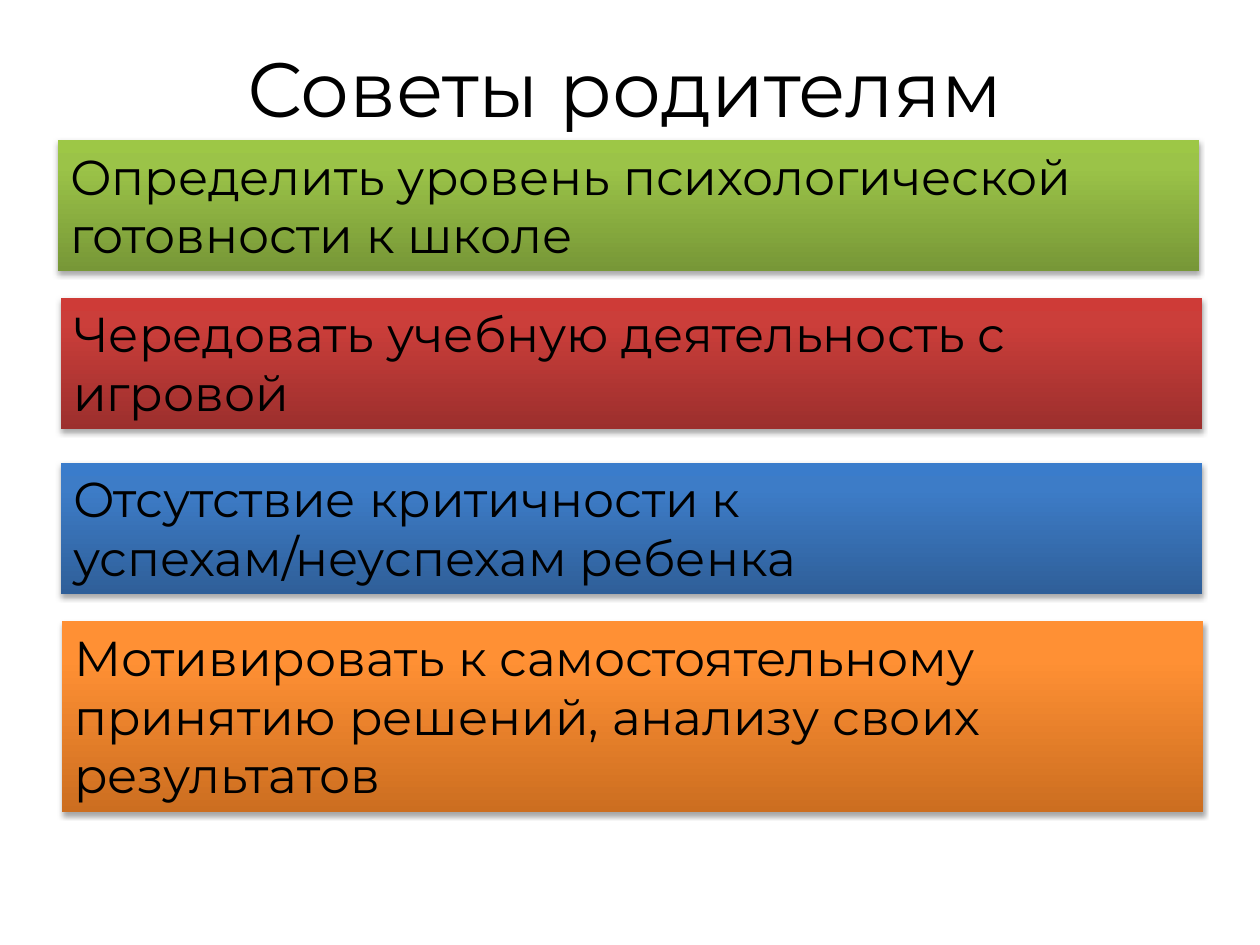
"""Build a slide with a title and four coloured bars of advice for parents."""
from dataclasses import dataclass

from lxml import etree
from pptx import Presentation
from pptx.dml.color import RGBColor
from pptx.enum.shapes import MSO_SHAPE
from pptx.enum.text import MSO_ANCHOR, MSO_AUTO_SIZE, PP_ALIGN
from pptx.oxml.ns import qn
from pptx.shapes.autoshape import Shape
from pptx.slide import Slide
from pptx.util import Pt

RECTANGLE = MSO_SHAPE.RECTANGLE
TOP = MSO_ANCHOR.TOP
GROW = MSO_AUTO_SIZE.SHAPE_TO_FIT_TEXT
LEFT, CENTER = PP_ALIGN.LEFT, PP_ALIGN.CENTER
TITLE_ONLY = 5
BAR_WIDTH = 652.3
PERCENT, DEGREE = 1000, 60000


@dataclass(frozen=True)
class Theme:
    font: str = "Montserrat"
    ink: str = "000000"
    title_size: float = 44
    advice_size: float = 28
    gradient_stops: tuple[int, ...] = (0, 80, 100)
    green: tuple[str, ...] = ("779737", "9BC348", "9DC746")
    red: tuple[str, ...] = ("9C2F2D", "CB3E3A", "CE3B37")
    blue: tuple[str, ...] = ("2F5F99", "3D7CC7", "3A7CCB")
    orange: tuple[str, ...] = ("CC6E20", "FF9034", "FF9136")
    shadow_opacity: int = 35
    shadow_blur: float = 3.1
    shadow_distance: float = 1.8


@dataclass(frozen=True)
class Advice:
    wording: str
    colours: tuple[str, ...]
    left: float
    top: float
    height: float


THEME = Theme()
ADVICE = (
    Advice("Определить уровень психологической готовности к школе",
           THEME.green, 33.1, 80, 75),
    Advice("Чередовать учебную деятельность с игровой",
           THEME.red, 34.7, 170.1, 75),
    Advice("Отсутствие критичности к успехам/неуспехам ребенка",
           THEME.blue, 34.7, 264.4, 75),
    Advice("Мотивировать к самостоятельному принятию решений, анализу своих результатов",
           THEME.orange, 35.4, 354.9, 109),
)


def place(shape: Shape, left: float, top: float, height: float) -> None:
    """Position a full-width shape, with lengths in points."""
    shape.left, shape.top = Pt(left), Pt(top)
    shape.width, shape.height = Pt(BAR_WIDTH), Pt(height)


def write(shape: Shape, wording: str, size: float, alignment: PP_ALIGN) -> None:
    """Put one formatted run into a shape."""
    frame = shape.text_frame
    frame.word_wrap = True
    frame.auto_size = GROW
    frame.vertical_anchor = TOP
    paragraph = frame.paragraphs[0]
    paragraph.alignment = alignment
    run = paragraph.add_run()
    run.text = wording
    run.font.name = THEME.font
    run.font.size = Pt(size)
    run.font.color.rgb = RGBColor.from_string(THEME.ink)


def add_colour(parent: etree._Element, colour: str) -> etree._Element:
    """Append an RGB colour element."""
    return etree.SubElement(parent, qn("a:srgbClr"), val=colour)


def shade(shape: Shape, colours: tuple[str, ...]) -> None:
    """Fill a shape with a gradient rising from its bottom edge."""
    shape.fill.background()
    empty_fill = shape._element.spPr.find(qn("a:noFill"))
    gradient = etree.Element(qn("a:gradFill"), rotWithShape="1")
    stops = etree.SubElement(gradient, qn("a:gsLst"))
    for position, colour in zip(THEME.gradient_stops, colours):
        stop = etree.SubElement(stops, qn("a:gs"), pos=str(position * PERCENT))
        add_colour(stop, colour)
    etree.SubElement(gradient, qn("a:lin"), ang=str(270 * DEGREE), scaled="0")
    empty_fill.getparent().replace(empty_fill, gradient)


def cast_shadow(shape: Shape) -> None:
    """Give a shape a soft shadow directly below it."""
    shape.shadow.inherit = False
    effects = shape._element.spPr.find(qn("a:effectLst"))
    shadow = etree.SubElement(
        effects, qn("a:outerShdw"), blurRad=str(Pt(THEME.shadow_blur)),
        dist=str(Pt(THEME.shadow_distance)), dir=str(90 * DEGREE), rotWithShape="0")
    etree.SubElement(add_colour(shadow, THEME.ink), qn("a:alpha"),
                     val=str(THEME.shadow_opacity * PERCENT))


def add_advice(slide: Slide, advice: Advice) -> None:
    """Draw one bar of advice."""
    bar = slide.shapes.add_shape(RECTANGLE, 0, 0, 0, 0)
    place(bar, advice.left, advice.top, advice.height)
    bar.line.fill.background()
    shade(bar, advice.colours)
    cast_shadow(bar)
    write(bar, advice.wording, THEME.advice_size, LEFT)


def main() -> None:
    """Build and save the slide."""
    deck = Presentation()
    deck.slide_width, deck.slide_height = Pt(720), Pt(540)
    slide = deck.slides.add_slide(deck.slide_layouts[TITLE_ONLY])
    title = slide.shapes.title
    place(title, 31, 19.4, 60.5)
    write(title, "Советы родителям", THEME.title_size, CENTER)
    for advice in ADVICE:
        add_advice(slide, advice)
    deck.save("out.pptx")


if __name__ == "__main__":
    main()
